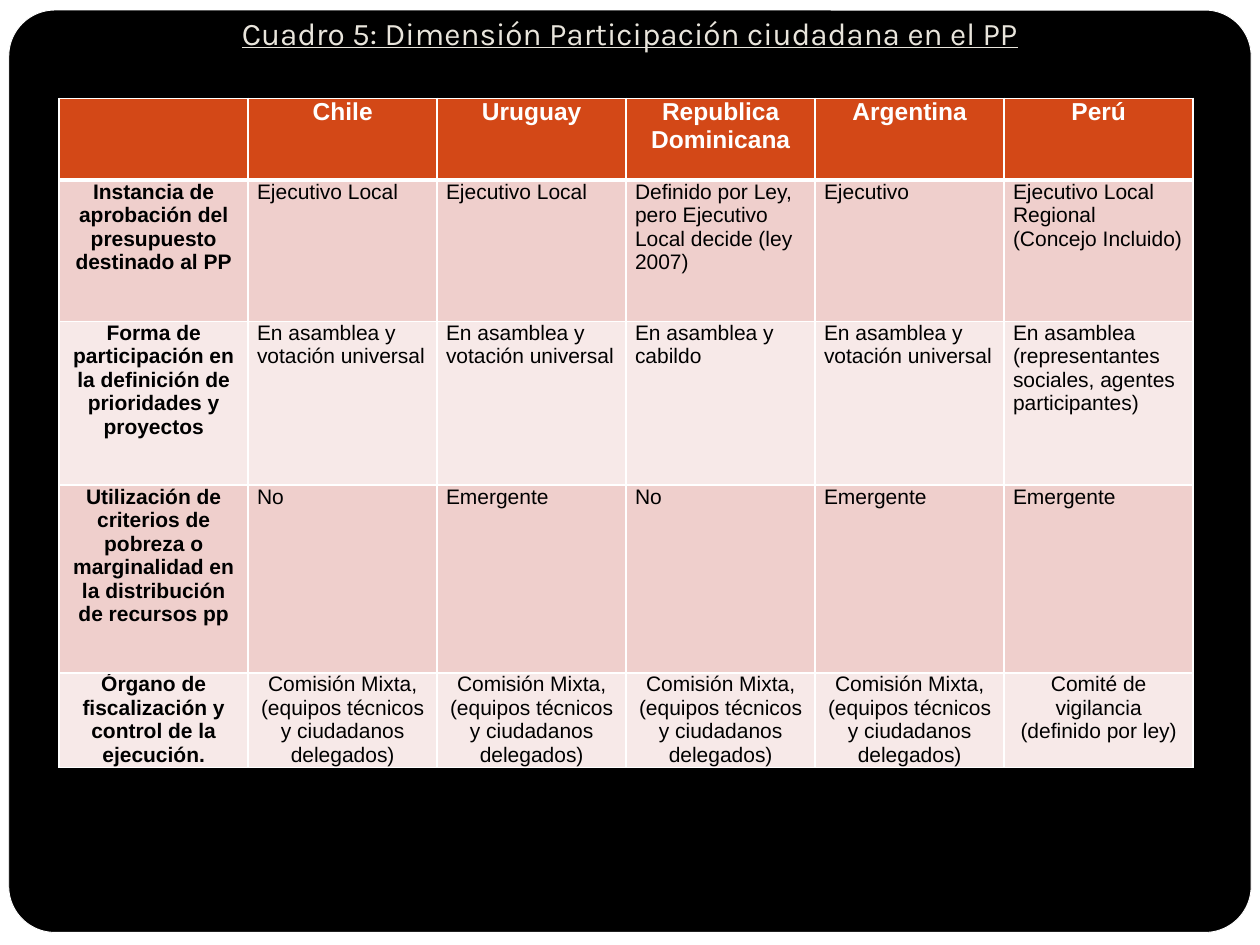
from lxml import etree
from pptx import Presentation
from pptx import util as u
from pptx.dml.color import RGBColor
from pptx.enum import shapes, text
from pptx.oxml.ns import qn

COLORS = {"black": "000000", "white": "FFFFFF", "title": "E9E5DC",
          "header": "D34817", "odd": "EFCFCC", "even": "F7E9E8"}
COMISION = "Comisión Mixta, (equipos técnicos y ciudadanos delegados)"
ASAMBLEA = "En asamblea y votación universal"
ROWS = [
    ["", "Chile", "Uruguay", "Republica Dominicana", "Argentina", "Perú"],
    ["Instancia de aprobación del presupuesto destinado al PP",
     "Ejecutivo Local", "Ejecutivo Local",
     "Definido por Ley, pero Ejecutivo Local decide (ley 2007)",
     "Ejecutivo", "Ejecutivo Local Regional (Concejo Incluido)"],
    ["Forma de participación en la definición de prioridades y proyectos",
     ASAMBLEA, ASAMBLEA, "En asamblea y cabildo", ASAMBLEA,
     "En asamblea (representantes sociales, agentes participantes)"],
    ["Utilización de criterios de pobreza o marginalidad en la distribución de recursos pp",
     "No", "Emergente", "No", "Emergente", "Emergente"],
    ["Órgano de fiscalización y control de la ejecución."] + [COMISION] * 4
    + ["Comité de vigilancia (definido por ley)"],
]
ROW_HEIGHTS = [0.65, 1.12, 1.3, 1.49, 0.75]


def rgb(name):
    return RGBColor.from_string(COLORS[name])


def paint(fill, color):
    fill.solid()
    fill.fore_color.rgb = rgb(color)


def style_font(font, color, **values):
    for name, value in values.items():
        setattr(font, name, value)
    font.color.rgb = rgb(color)


def add_panel(s, kind, box, color, line=None):
    sp = s.shapes.add_shape(kind, *map(u.Inches, box))
    sp.shadow.inherit = False
    paint(sp.fill, color)
    if line:
        sp.line.color.rgb = rgb(line)
        sp.line.width = u.Pt(0.5)
    else:
        sp.line.fill.background()
    return sp


def set_title(s, words):
    sp = s.shapes.title
    sp.left, sp.top, sp.width, sp.height = map(u.Inches, (0.5, 0.06, 9, 0.4))
    tf = sp.text_frame
    tf.word_wrap = True
    tf.auto_size = text.MSO_AUTO_SIZE.NONE
    tf.vertical_anchor = text.MSO_ANCHOR.MIDDLE
    tf.margin_top = tf.margin_bottom = u.Inches(0.05)
    p = tf.paragraphs[0]
    p.alignment = text.PP_ALIGN.CENTER
    r = p.add_run()
    r.text = words
    style_font(r.font, "title", name="Karla", size=u.Pt(18), underline=True)
    s.shapes._spTree.append(sp._element)


def set_borders(cell, bottom):
    tc_pr = cell._tc.get_or_add_tcPr()
    for side, width in (("L", 1), ("R", 1), ("T", 1), ("B", bottom)):
        ln = etree.SubElement(tc_pr, qn(f"a:ln{side}"), w=str(u.Pt(width)))
        fill = etree.SubElement(ln, qn("a:solidFill"))
        etree.SubElement(fill, qn("a:srgbClr"), val=COLORS["white"])


def fill_cell(cell, words, row, col):
    header = row == 0
    set_borders(cell, 3 if header else 1)
    paint(cell.fill, "header" if header else "odd" if row % 2 else "even")
    cell.margin_left = cell.margin_right = u.Inches(0.07)
    cell.margin_top = cell.margin_bottom = 0
    if not words:
        return
    p = cell.text_frame.paragraphs[0]
    centered = header or col == 0 or row == len(ROWS) - 1
    p.alignment = text.PP_ALIGN.CENTER if centered else text.PP_ALIGN.LEFT
    r = p.add_run()
    r.text = words
    style_font(r.font, "white" if header else "black", name="Arial",
               size=u.Pt(14 if header else 12), bold=header or col == 0)


def add_comparison(s):
    box = (0.47, 0.78, 9, sum(ROW_HEIGHTS))
    table = s.shapes.add_table(len(ROWS), len(ROWS[0]), *map(u.Inches, box)).table
    for column in table.columns:
        column.width = u.Inches(1.5)
    for i, (height, words) in enumerate(zip(ROW_HEIGHTS, ROWS)):
        table.rows[i].height = u.Inches(height)
        for j, value in enumerate(words):
            fill_cell(table.cell(i, j), value, i, j)


def main():
    prs = Presentation()
    prs.slide_width, prs.slide_height = u.Inches(10), u.Inches(7.5)
    s = prs.slides.add_slide(prs.slide_layouts[5])
    paint(s.background.fill, "black")
    add_panel(s, shapes.MSO_SHAPE.RECTANGLE, (0, 0, 10, 7.5), "white")
    panel = add_panel(s, shapes.MSO_SHAPE.ROUNDED_RECTANGLE,
                      (0.07, 0.08, 9.86, 7.32), "black", "white")
    panel.adjustments[0] = 0.05
    add_comparison(s)
    set_title(s, "Cuadro 5: Dimensión Participación ciudadana en el PP")
    prs.save("out.pptx")


if __name__ == "__main__":
    main()
